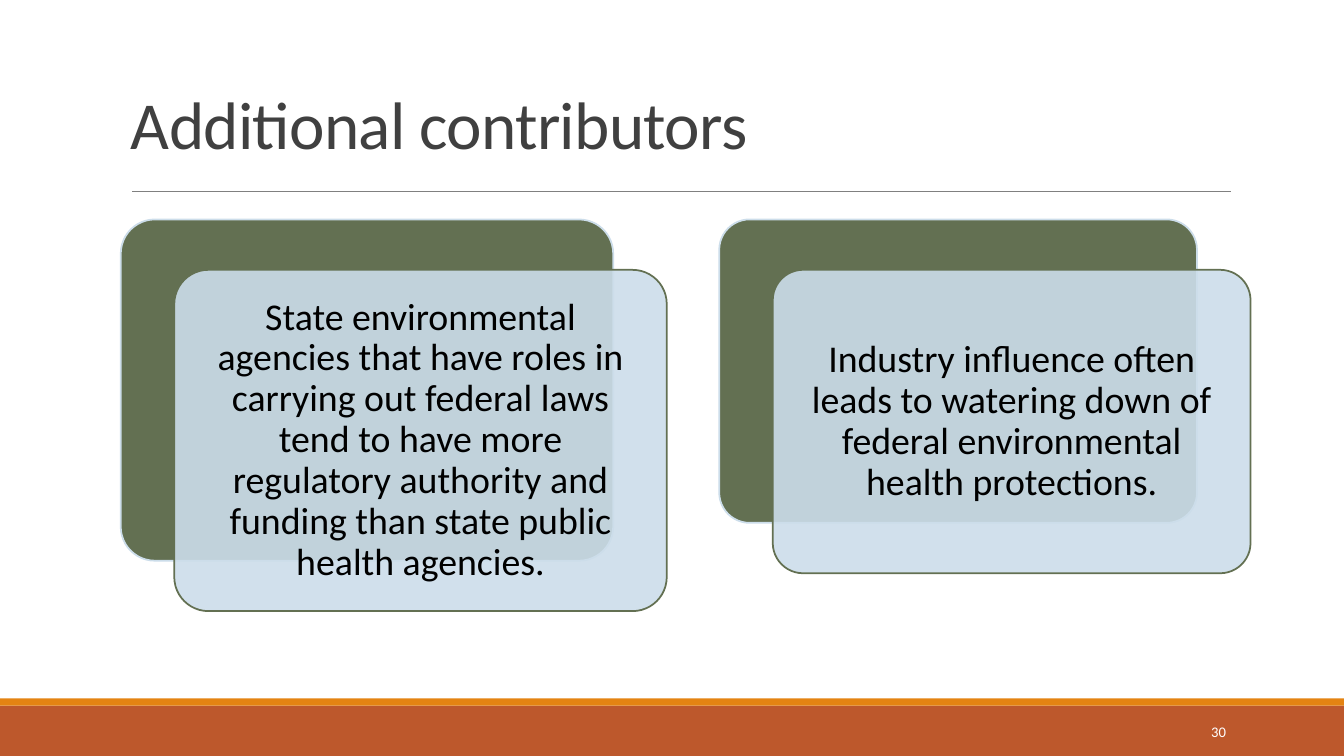
from dataclasses import dataclass

from lxml import etree
from pptx import Presentation
from pptx import util as u
from pptx.dml.color import RGBColor
from pptx.enum import shapes, text
from pptx.oxml.ns import qn

EMU_PER_PX = 9525  # 96 px to the inch
FONT = "Calibri"

WHITE = RGBColor(0xFF, 0xFF, 0xFF)
BLACK = RGBColor(0x00, 0x00, 0x00)
DARK_GREY = RGBColor(0x40, 0x40, 0x40)
RULE_GREY = RGBColor(0x80, 0x80, 0x80)
RUST = RGBColor(0xBD, 0x58, 0x2C)
ORANGE = RGBColor(0xE4, 0x83, 0x12)
GREEN = RGBColor(0x63, 0x70, 0x52)
PALE_BLUE = RGBColor(0xCC, 0xDD, 0xEA)

CARD_TOP = 209
CARD_SHIFT_X, CARD_SHIFT_Y = 51, 48
CARD_INSET = 11


@dataclass
class Band:
    top: int
    height: int
    color: RGBColor


@dataclass
class Card:
    left: int
    width: int
    height: int
    message: str


BANDS = [Band(672, 48, RUST), Band(665, 7, ORANGE)]
CARDS = [
    Card(115, 469, 325,
         "State environmental agencies that have roles in carrying out federal "
         "laws tend to have more regulatory authority and funding than state "
         "public health agencies."),
    Card(685, 455, 289,
         "Industry influence often leads to watering down of federal "
         "environmental health protections."),
]


def px(n: int) -> u.Emu:
    return u.Emu(n * EMU_PER_PX)


def style_text(p, size: float, color: RGBColor, align) -> None:
    p.alignment = align
    for r in p.runs:
        r.font.name = FONT
        r.font.size = u.Pt(size)
        r.font.color.rgb = color


def add_band(slide, band: Band) -> None:
    sp = slide.shapes.add_shape(shapes.MSO_SHAPE.RECTANGLE, 0, px(band.top),
                                px(1280), px(band.height))
    sp.shadow.inherit = False
    sp.fill.solid()
    sp.fill.fore_color.rgb = band.color
    sp.line.fill.background()


def add_panel(slide, left: int, top: int, card: Card,
              fill: RGBColor, line: RGBColor):
    sp = slide.shapes.add_shape(shapes.MSO_SHAPE.ROUNDED_RECTANGLE, px(left),
                                px(top), px(card.width), px(card.height))
    sp.adjustments[0] = 0.1
    sp.shadow.inherit = False
    sp.fill.solid()
    sp.fill.fore_color.rgb = fill
    sp.line.color.rgb = line
    sp.line.width = u.Pt(1.25)
    return sp


def add_card(slide, card: Card) -> None:
    add_panel(slide, card.left, CARD_TOP, card, GREEN, PALE_BLUE)
    sp = add_panel(slide, card.left + CARD_SHIFT_X, CARD_TOP + CARD_SHIFT_Y,
                   card, PALE_BLUE, GREEN)
    # Front panel lets the back one show through
    color = sp.fill._xPr.find(qn("a:solidFill"))[0]
    etree.SubElement(color, qn("a:alpha"), val="90000")

    tf = sp.text_frame
    tf.word_wrap = True
    tf.vertical_anchor = text.MSO_ANCHOR.MIDDLE
    tf.margin_left = tf.margin_right = px(CARD_INSET)
    tf.margin_top = tf.margin_bottom = px(CARD_INSET)
    tf.text = card.message
    p = tf.paragraphs[0]
    p.line_spacing = 0.9
    style_text(p, 27, BLACK, text.PP_ALIGN.CENTER)


def add_title(slide, title: str) -> None:
    sp = slide.shapes.title
    sp.left, sp.top, sp.width, sp.height = px(115), px(30), px(1056), px(130)
    tf = sp.text_frame
    tf.text = title
    tf.word_wrap = True
    tf.auto_size = text.MSO_AUTO_SIZE.NONE
    tf.vertical_anchor = text.MSO_ANCHOR.BOTTOM
    p = tf.paragraphs[0]
    p.line_spacing = 0.85
    style_text(p, 48, DARK_GREY, text.PP_ALIGN.LEFT)
    p.runs[0].font._element.set("spc", "-50")


def add_rule(slide) -> None:
    rule = slide.shapes.add_connector(shapes.MSO_CONNECTOR.STRAIGHT, px(126),
                                      px(182), px(1172), px(182))
    rule.line.color.rgb = RULE_GREY
    rule.line.width = u.Pt(0.5)
    etree.SubElement(rule._element.spPr, qn("a:effectLst"))


def add_slide_number(slide, number: int) -> None:
    sp = slide.shapes.add_textbox(px(1040), px(678), px(137), px(38))
    tf = sp.text_frame
    tf.word_wrap = True
    tf.vertical_anchor = text.MSO_ANCHOR.MIDDLE
    tf.text = str(number)
    style_text(tf.paragraphs[0], 10.5, WHITE, text.PP_ALIGN.RIGHT)


def main() -> None:
    prs = Presentation()
    prs.slide_width, prs.slide_height = px(1280), px(720)
    slide = prs.slides.add_slide(prs.slide_layouts.get_by_name("Title Only"))

    # Footer bands, title and rule
    for band in BANDS:
        add_band(slide, band)
    add_rule(slide)
    add_title(slide, "Additional contributors")
    add_slide_number(slide, 30)

    # Contributor cards
    for card in CARDS:
        add_card(slide, card)

    prs.save("out.pptx")


if __name__ == "__main__":
    main()
